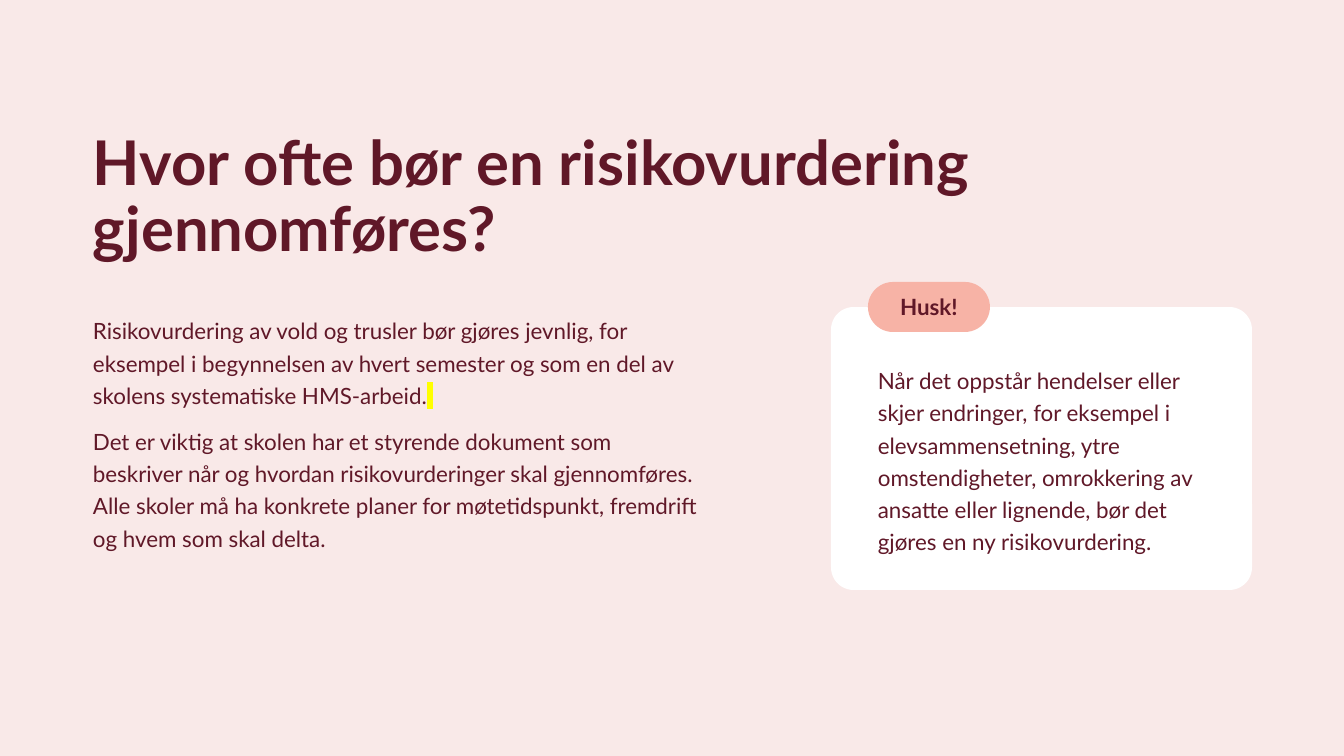
from dataclasses import dataclass

from lxml.etree import SubElement
from pptx import Presentation
from pptx.dml.color import RGBColor
from pptx.enum.shapes import MSO_SHAPE
from pptx.enum.text import MSO_ANCHOR, MSO_AUTO_SIZE, PP_ALIGN
from pptx.oxml.ns import qn
from pptx.util import Pt


@dataclass(frozen=True)
class Theme:
    font: str = "Lato"
    background: str = "F9E9E8"
    ink: str = "601828"
    card: str = "FFFFFF"
    badge: str = "F7B3A6"
    marker: str = "FFFF00"
    title_size: int = 44
    text_size: int = 16


theme = Theme()
PX = 914400 / 100.8


def place(shape, left, top, width, height):
    shape.left, shape.top = round(left * PX), round(top * PX)
    shape.width, shape.height = round(width * PX), round(height * PX)


def add_span(para, text, size=theme.text_size, bold=False):
    span = para.add_run()
    span.text = text
    span.font.name = theme.font
    span.font.size = Pt(size)
    span.font.bold = bold
    span.font.color.rgb = RGBColor.from_string(theme.ink)
    return span


deck = Presentation()
deck.slide_width, deck.slide_height = round(1344 * PX), round(756 * PX)
page = deck.slides.add_slide(deck.slide_layouts[1])
page.background.fill.solid()
page.background.fill.fore_color.rgb = RGBColor.from_string(theme.background)

title = page.shapes.title
place(title, 93, 124, 1159, 146)
body = page.placeholders[1]
place(body, 93, 307, 617, 250)
for holder, anchor in ((title, MSO_ANCHOR.BOTTOM), (body, MSO_ANCHOR.TOP)):
    frame = holder.text_frame
    frame.margin_left = 0
    frame.vertical_anchor = anchor
    frame.word_wrap = True
    frame.auto_size = MSO_AUTO_SIZE.NONE

heading = title.text_frame.paragraphs[0]
heading.alignment = PP_ALIGN.LEFT
heading.line_spacing = 0.9
add_span(heading, "Hvor ofte bør en risikovurdering gjennomføres?", theme.title_size, True)

advice = body.text_frame.paragraphs[0]
planning = body.text_frame.add_paragraph()
for para in (advice, planning):
    para.line_spacing = 1.2
    para.space_before = Pt(10)
    properties = para._p.get_or_add_pPr()
    properties.set("marL", "0")
    properties.set("indent", "0")
    SubElement(properties, qn("a:buNone"))

add_span(
    advice,
    "Risikovurdering av vold og trusler bør gjøres jevnlig, for eksempel i begynnelsen "
    "av hvert semester og som en del av skolens systematiske HMS-arbeid.",
)
marked = add_span(advice, " ")
highlight = SubElement(marked.font._element, qn("a:highlight"))
SubElement(highlight, qn("a:srgbClr")).set("val", theme.marker)
marked.font._element.find(qn("a:solidFill")).addnext(highlight)
add_span(
    planning,
    "Det er viktig at skolen har et styrende dokument som beskriver når og hvordan "
    "risikovurderinger skal gjennomføres. Alle skoler må ha konkrete planer for "
    "møtetidspunkt, fremdrift og hvem som skal delta.",
)

card = page.shapes.add_shape(MSO_SHAPE.ROUNDED_RECTANGLE, 0, 0, 0, 0)
place(card, 831, 307, 421, 283)
badge = page.shapes.add_shape(MSO_SHAPE.ROUNDED_RECTANGLE, 0, 0, 0, 0)
place(badge, 868, 282, 122, 50)
for shape, color, corner in ((card, theme.card, 0.08), (badge, theme.badge, 0.5)):
    shape.adjustments[0] = corner
    shape.fill.solid()
    shape.fill.fore_color.rgb = RGBColor.from_string(color)
    shape.line.fill.background()
    shape.shadow.inherit = False

badge.text_frame.vertical_anchor = MSO_ANCHOR.MIDDLE
label = badge.text_frame.paragraphs[0]
label.alignment = PP_ALIGN.CENTER
add_span(label, "Husk!", bold=True)

note = page.shapes.add_textbox(0, 0, 0, 0)
place(note, 868, 357, 342, 204)
note.text_frame.word_wrap = True
reminder = note.text_frame.paragraphs[0]
reminder.line_spacing = 1.2
add_span(
    reminder,
    "Når det oppstår hendelser eller skjer endringer, for eksempel i elevsammensetning, "
    "ytre omstendigheter, omrokkering av ansatte eller lignende, bør det gjøres en ny "
    "risikovurdering.",
)

deck.save("out.pptx")
